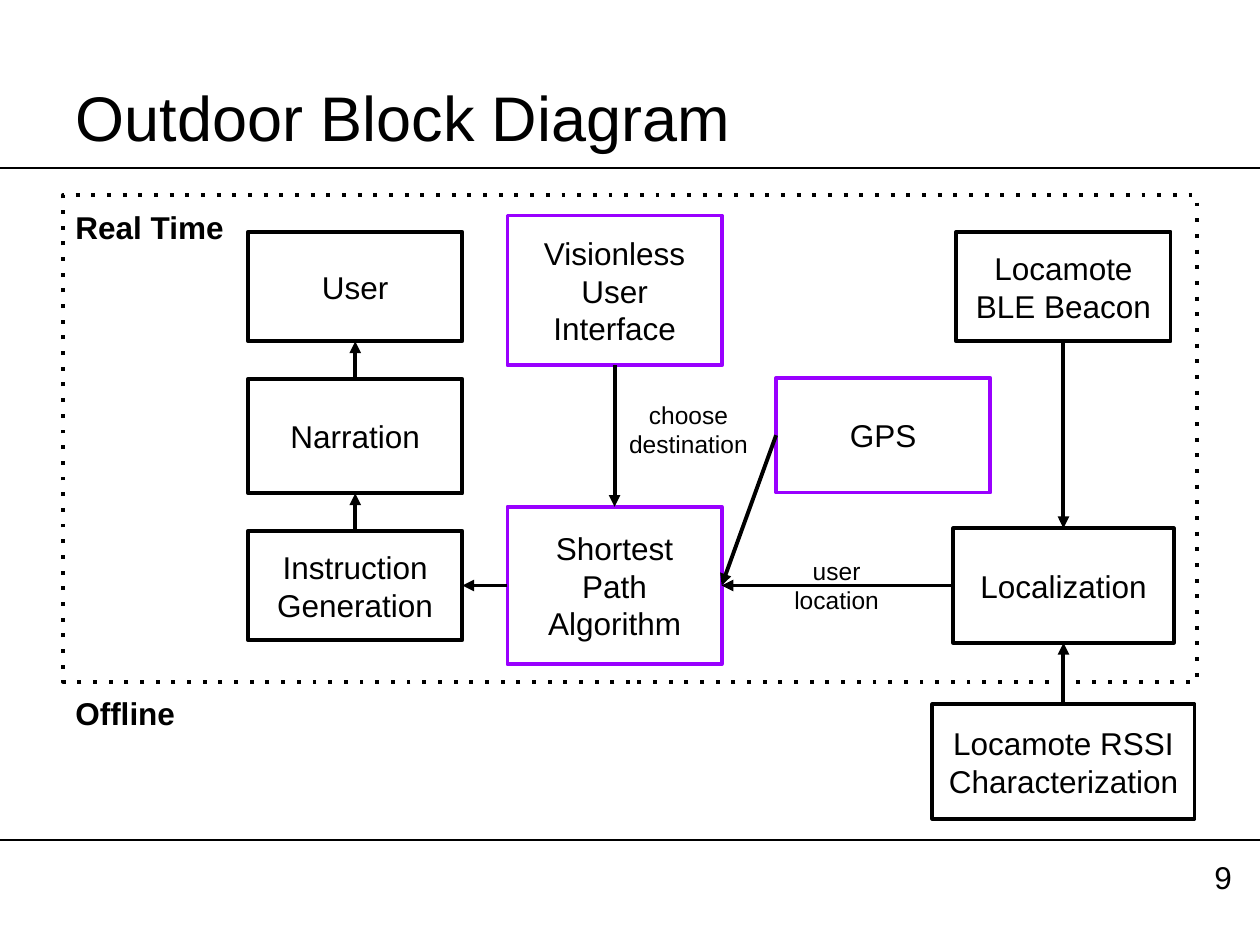
"""Build the outdoor block diagram slide."""
from dataclasses import dataclass

from pptx import Presentation
from pptx import util as u
from pptx.dml.color import RGBColor
from pptx.enum import dml, shapes, text
from pptx.oxml import ns, xmlchemy

BLACK = RGBColor(0x00, 0x00, 0x00)
PURPLE = RGBColor(0x99, 0x00, 0xFF)
TOP, LEFT, BOTTOM, RIGHT = range(4)
USER_X, PATH_X, GPS_X, BEACON_X = 203, 351.2, 504.7, 607.7
SOURCE_Y, MIDDLE_Y, PATH_Y, OFFLINE_Y = 163.8, 249.2, 334.6, 435.2
INSET = 7.2


@dataclass(frozen=True)
class Block:
    """A box placed by its centre."""
    words: str
    center_x: float
    center_y: float
    height: float
    width: float = 122.4
    color: RGBColor = BLACK


@dataclass(frozen=True)
class Arrow:
    """A link between the sides of two blocks."""
    start: str
    start_side: int
    end: str
    end_side: int


@dataclass(frozen=True)
class Label:
    """Free text placed by its top left corner."""
    words: str
    left: float
    top: float
    width: float
    height: float
    size: float = 18
    bold: bool = False
    centered: bool = False


BLOCKS = {
    "user": Block("User", USER_X, SOURCE_Y, 62.6),
    "voice": Block("Narration", USER_X, MIDDLE_Y, 65.5),
    "instruction": Block("Instruction Generation", USER_X, PATH_Y, 62.6),
    "interface": Block("Visionless User Interface", PATH_X, 166, 85.7, color=PURPLE),
    "path": Block("Shortest Path Algorithm", PATH_X, PATH_Y, 90, color=PURPLE),
    "gps": Block("GPS", GPS_X, MIDDLE_Y - 0.5, 65.5, color=PURPLE),
    "beacon": Block("Locamote BLE Beacon", BEACON_X, SOURCE_Y, 62.6),
    "localization": Block("Localization", BEACON_X, PATH_Y, 65.5, 126),
    "rssi": Block("Locamote RSSI Characterization", BEACON_X, OFFLINE_Y, 65.5, 149.8),
}
ARROWS = [
    Arrow("gps", LEFT, "path", RIGHT),
    Arrow("interface", BOTTOM, "path", TOP),
    Arrow("path", LEFT, "instruction", RIGHT),
    Arrow("instruction", TOP, "voice", BOTTOM),
    Arrow("voice", TOP, "user", BOTTOM),
    Arrow("localization", LEFT, "path", RIGHT),
    Arrow("beacon", BOTTOM, "localization", TOP),
    Arrow("rssi", TOP, "localization", BOTTOM),
]
LABELS = [
    Label("Real Time", 36, 111.6, 112.3, 27.4, bold=True),
    Label("Offline", 36, 389.5, 112.3, 27.4, bold=True),
    Label("choose\ndestination", 350.6, 229, 85.7, 32.4, 14, centered=True),
    Label("user location", 442.1, 318.2, 72, 32.4, 14, centered=True),
    Label("9", 686.9, 483.1, 25.9, 33.8),
]


def write(shape, words: str, size: float, bold: bool, align, anchor) -> None:
    """Fill a shape with formatted text."""
    frame = shape.text_frame
    frame.text = words
    layout = {"word_wrap": True, "auto_size": text.MSO_AUTO_SIZE.NONE,
              "vertical_anchor": anchor}
    sides = ("left", "top", "right", "bottom")
    layout |= {f"margin_{side}": u.Pt(INSET) for side in sides}
    for name, value in layout.items():
        setattr(frame, name, value)
    for paragraph in frame.paragraphs:
        paragraph.alignment = align
        style = {"name": "Arial", "size": u.Pt(size), "bold": bold}
        for name, value in style.items():
            setattr(paragraph.font, name, value)
        paragraph.font.color.rgb = BLACK


def add_box(slide, left: float, top: float, width: float, height: float,
            color: RGBColor = BLACK):
    """Add an unfilled outlined rectangle."""
    box = slide.shapes.add_shape(
        shapes.MSO_SHAPE.RECTANGLE, *map(u.Pt, (left, top, width, height)))
    box.shadow.inherit = False
    box.fill.background()
    box.line.color.rgb = color
    box.line.width = u.Pt(2.25)
    return box


def add_block(slide, block: Block):
    """Add a labelled block."""
    box = add_box(slide, block.center_x - block.width / 2,
                  block.center_y - block.height / 2,
                  block.width, block.height, block.color)
    write(box, block.words, 18, False, text.PP_ALIGN.CENTER, text.MSO_ANCHOR.MIDDLE)
    return box


def add_line(slide, width: float, y: float = 0):
    """Add a plain black line across the slide."""
    line = slide.shapes.add_connector(
        shapes.MSO_CONNECTOR.STRAIGHT, 0, u.Pt(y), u.Pt(720), u.Pt(y))
    line.line.color.rgb = BLACK
    line.line.width = u.Pt(width)
    line._element.spPr.append(xmlchemy.OxmlElement("a:effectLst"))
    return line


def add_arrow(slide, arrow: Arrow, boxes: dict) -> None:
    """Join two blocks with an arrow."""
    line = add_line(slide, 2.25)
    line.begin_connect(boxes[arrow.start], arrow.start_side)
    line.end_connect(boxes[arrow.end], arrow.end_side)
    head = xmlchemy.OxmlElement("a:tailEnd")
    head.set("type", "triangle")
    line._element.spPr.find(ns.qn("a:ln")).append(head)


def add_label(slide, label: Label) -> None:
    """Add a free text label."""
    box = slide.shapes.add_textbox(
        *map(u.Pt, (label.left, label.top, label.width, label.height)))
    align, anchor = text.PP_ALIGN.LEFT, text.MSO_ANCHOR.TOP
    if label.centered:
        align, anchor = text.PP_ALIGN.CENTER, text.MSO_ANCHOR.MIDDLE
    write(box, label.words, label.size, label.bold, align, anchor)


def main() -> None:
    """Assemble and save the slide."""
    deck = Presentation()
    deck.slide_width, deck.slide_height = u.Pt(720), u.Pt(540)
    slide = deck.slides.add_slide(deck.slide_layouts[5])
    for y in (96, 480):
        add_line(slide, 1, y)
    title = slide.shapes.title
    place = {"left": 36, "top": 21.6, "width": 648, "height": 90}
    for name, value in place.items():
        setattr(title, name, u.Pt(value))
    write(title, "Outdoor Block Diagram", 36, False,
          text.PP_ALIGN.LEFT, text.MSO_ANCHOR.MIDDLE)
    real_time = add_box(slide, 36, 111.6, 648, 277.9)
    real_time.line.dash_style = dml.MSO_LINE.ROUND_DOT
    real_time._element.spPr.find(".//" + ns.qn("a:prstDash")).set("val", "dot")
    boxes = {key: add_block(slide, block) for key, block in BLOCKS.items()}
    for arrow in ARROWS:
        add_arrow(slide, arrow, boxes)
    for label in LABELS:
        add_label(slide, label)
    deck.save("out.pptx")


if __name__ == "__main__":
    main()
